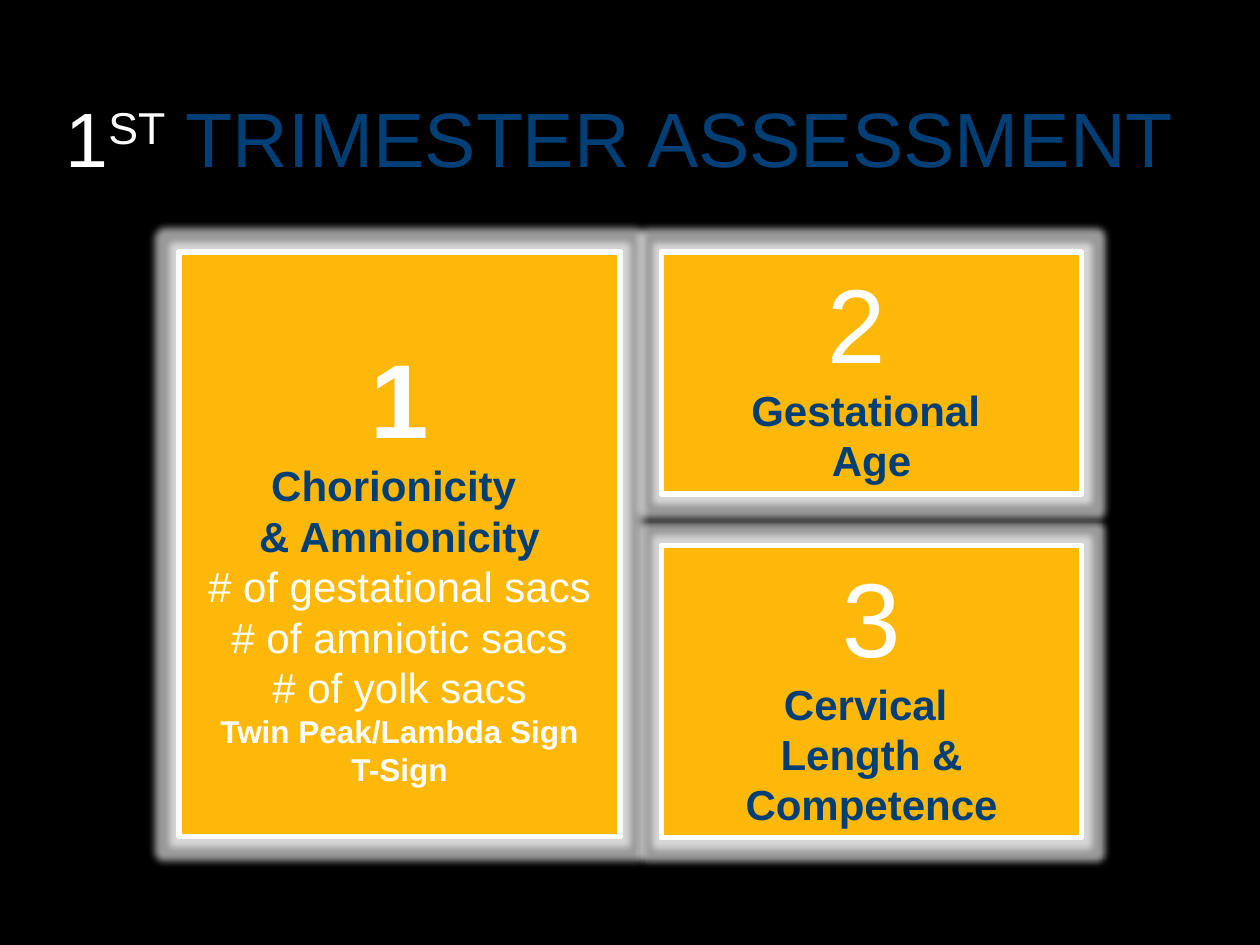
import pptx
import pptx.util
import pptx.dml.color
import pptx.enum.shapes
import pptx.enum.text
import lxml.etree
from pptx.util import Cm, Pt
from pptx.dml.color import RGBColor

BLACK = RGBColor(0x00, 0x00, 0x00)
WHITE = RGBColor(0xFF, 0xFF, 0xFF)
NAVY = RGBColor(0x00, 0x3F, 0x75)
AMBER = RGBColor(0xFE, 0xB8, 0x0A)
GLOW = (
    '<a:effectLst xmlns:a="http://schemas.openxmlformats.org/drawingml/2006/main">'
    '<a:glow rad="101600"><a:srgbClr val="FFFFFF"><a:alpha val="60000"/></a:srgbClr></a:glow>'
    '</a:effectLst>'
)


def style(font, size, color, bold=False):
    font.name = "Arial"
    font.size = Pt(size)
    font.color.rgb = color
    font.bold = bold


prs = pptx.Presentation()
prs.slide_width = Cm(25.4)
prs.slide_height = Cm(19.05)
slide = prs.slides.add_slide(prs.slide_layouts[6])
slide.background.fill.solid()
slide.background.fill.fore_color.rgb = BLACK

title = slide.shapes.add_textbox(Cm(1.07), Cm(1.7), Cm(23.6), Cm(2.13)).text_frame
title.word_wrap = False
title.auto_size = pptx.enum.text.MSO_AUTO_SIZE.SHAPE_TO_FIT_TEXT
for words, color in [("1", WHITE), ("ST", WHITE), (" TRIMESTER ASSESSMENT", NAVY)]:
    run = title.paragraphs[0].add_run()
    run.text = words
    style(run.font, 44, color)
    if words == "ST":
        run.font._element.set("baseline", "30000")

left_column, right_column = 3.61, 13.34
top_row, bottom_row = 5.08, 11.0
heading = (24, NAVY, True)
count = (24, WHITE, False)
sign = (18, WHITE, True)
number = (60, WHITE, False)

assessments = [
    (left_column, top_row, 8.89, 11.79, 1.65, [
        ("1", (60, WHITE, True)),
        ("Chorionicity ", heading),
        ("& Amnionicity", heading),
        ("# of gestational sacs", count),
        ("# of amniotic sacs", count),
        ("# of yolk sacs", count),
        ("Twin Peak/Lambda Sign", sign),
        ("T-Sign", sign),
    ]),
    (right_column, top_row, 8.46, 4.88, 0.13, [
        ("2 ", number),
        ("Gestational ", heading),
        ("Age", heading),
    ]),
    (right_column, bottom_row, 8.46, 5.89, 0.13, [
        ("3", number),
        ("Cervical ", heading),
        ("Length &", heading),
        ("Competence", heading),
    ]),
]

for left, top, width, height, inset, lines in assessments:
    panel = slide.shapes.add_shape(
        pptx.enum.shapes.MSO_SHAPE.RECTANGLE, Cm(left), Cm(top), Cm(width), Cm(height))
    panel.fill.solid()
    panel.fill.fore_color.rgb = AMBER
    panel.line.color.rgb = WHITE
    panel.line.width = Pt(3)
    panel._element.spPr.append(lxml.etree.fromstring(GLOW))
    frame = panel.text_frame
    frame.word_wrap = True
    frame.vertical_anchor = pptx.enum.text.MSO_ANCHOR.TOP
    frame.margin_top = Cm(inset)
    for index, (words, look) in enumerate(lines):
        paragraph = frame.add_paragraph() if index else frame.paragraphs[0]
        paragraph.text = words
        paragraph.alignment = pptx.enum.text.PP_ALIGN.CENTER
        style(paragraph.font, *look)

prs.save("out.pptx")
